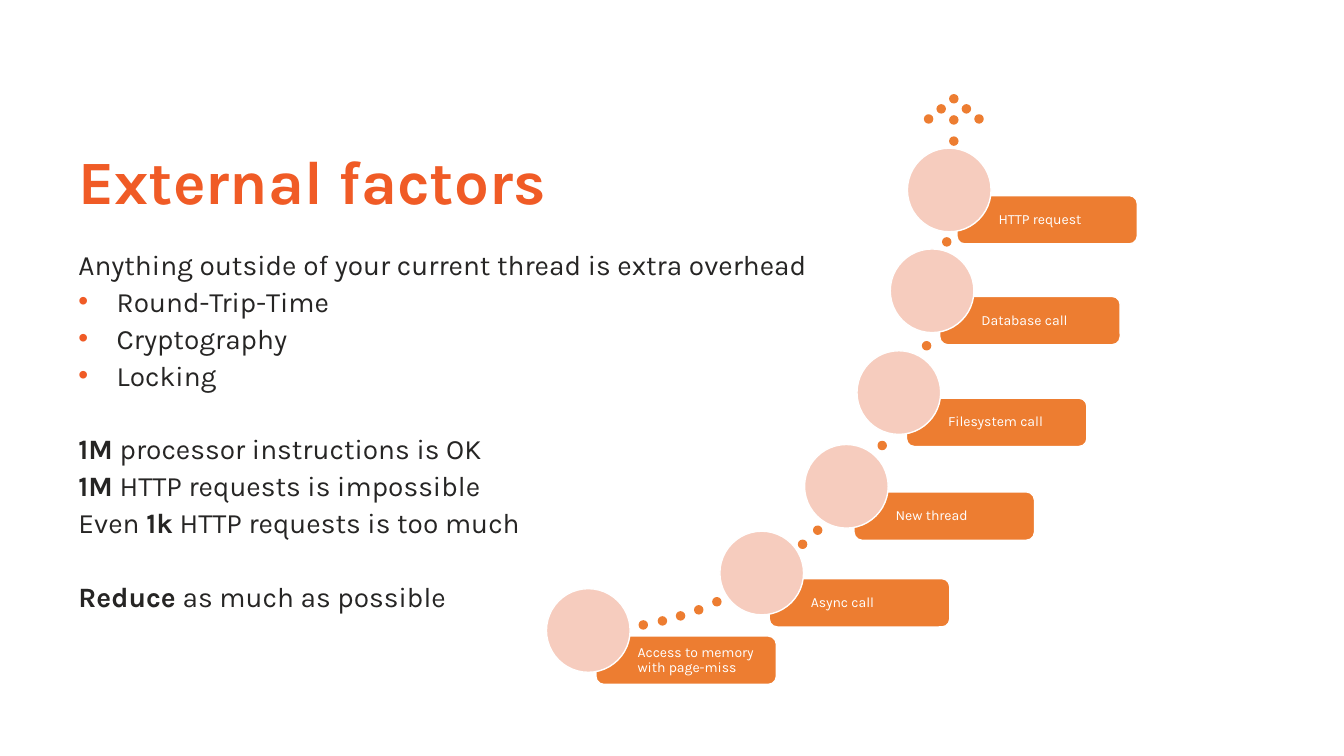
from lxml import etree
from pptx import Presentation
from pptx.dml.color import RGBColor
from pptx.enum.shapes import MSO_SHAPE
from pptx.enum.text import MSO_ANCHOR, MSO_AUTO_SIZE, PP_ALIGN
from pptx.oxml.ns import qn
from pptx.util import Inches, Pt

OVAL = MSO_SHAPE.OVAL
ROUND = MSO_SHAPE.ROUNDED_RECTANGLE
LEFT = PP_ALIGN.LEFT
MIDDLE = MSO_ANCHOR.MIDDLE
TOP = MSO_ANCHOR.TOP
FIXED = MSO_AUTO_SIZE.NONE

BODY = [
    ("Anything outside of your current thread is extra overhead", False, 0),
    ("Round-Trip-Time", True, 0),
    ("Cryptography", True, 0),
    ("Locking", True, 0),
    ("*1M* processor instructions is OK", False, 26.4),
    ("*1M* HTTP requests is impossible", False, 0),
    ("Even *1k* HTTP requests is too much", False, 0),
    ("*Reduce* as much as possible", False, 26.4),
]
STEPS = [
    ("Access to memory with page-miss", 5.42, 5.84),
    ("Async call", 7.14, 5.27),
    ("New thread", 7.98, 4.41),
    ("Filesystem call", 8.5, 3.48),
    ("Database call", 8.83, 2.47),
    ("HTTP request", 9, 1.47),
]
TRAIL = [
    (7.07, 5.93), (6.89, 6.01), (6.71, 6.07), (6.53, 6.12), (6.34, 6.16),
    (8.07, 5.22), (7.92, 5.36), (8.71, 4.38), (9.15, 3.39), (9.35, 2.36),
    (9.42, 1.15), (9.42, 1.36),
]
TIP = [(9.42 + 0.125 * n, 0.94 + 0.1 * abs(n)) for n in range(-2, 3)]


def rgb(code):
    return RGBColor.from_string(code)


class Deck:
    face = "Karla"
    accent = "F05B26"
    ink = "262524"
    orange = "ED7D31"
    pale = "F6CCBE"
    white = "FFFFFF"

    def __init__(self):
        self.prs = Presentation()
        self.prs.slide_width = Inches(13.33)
        self.prs.slide_height = Inches(7.5)
        self.slide = self.prs.slides.add_slide(self.prs.slide_layouts[5])

    def style(self, font, size, color, bold=False):
        font.name = self.face
        font.size = Pt(size)
        font.bold = bold
        font.color.rgb = rgb(color)

    def frame(self, frame, anchor):
        frame.word_wrap = True
        frame.auto_size = FIXED
        frame.vertical_anchor = anchor

    def title(self, text, x, y, w, h):
        title = self.slide.shapes.title
        title.left, title.top, title.width, title.height = map(Inches, (x, y, w, h))
        frame = title.text_frame
        frame.text = text
        self.frame(frame, MIDDLE)
        para = frame.paragraphs[0]
        para.alignment = LEFT
        para.line_spacing = 0.9
        self.style(para.runs[0].font, 44, self.accent, True)

    def bullet(self, para):
        props = para._p.get_or_add_pPr()
        props.set("marL", str(Inches(0.38)))
        props.set("indent", str(-Inches(0.38)))
        color = etree.SubElement(props, qn("a:buClr"))
        etree.SubElement(color, qn("a:srgbClr"), val=self.accent)
        etree.SubElement(props, qn("a:buFont"), typeface="Arial")
        etree.SubElement(props, qn("a:buChar"), char="•")

    def body(self, lines, x, y, w, h):
        box = self.slide.shapes.add_textbox(*map(Inches, (x, y, w, h)))
        frame = box.text_frame
        self.frame(frame, TOP)
        for row, (text, listed, gap) in enumerate(lines):
            para = frame.add_paragraph() if row else frame.paragraphs[0]
            if listed:
                self.bullet(para)
            para.line_spacing = 1.1
            para.space_before = Pt(gap)
            for part, words in enumerate(text.split("*")):
                if words:
                    run = para.add_run()
                    run.text = words
                    self.style(run.font, 20, self.ink, part % 2 == 1)

    def shape(self, kind, x, y, w, h, fill, line):
        shape = self.slide.shapes.add_shape(kind, *map(Inches, (x, y, w, h)))
        shape.shadow.inherit = False
        shape.fill.solid()
        shape.fill.fore_color.rgb = rgb(fill)
        shape.line.color.rgb = rgb(line)
        shape.line.width = Pt(1)
        return shape

    def dot(self, x, y):
        self.shape(OVAL, x, y, 0.08, 0.08, self.orange, self.orange)

    def step(self, text, x, y):
        card = self.shape(ROUND, x + 0.49, y + 0.47, 1.79, 0.48, self.orange, self.white)
        frame = card.text_frame
        frame.text = text
        self.frame(frame, MIDDLE)
        frame.margin_left = Inches(0.39)
        frame.margin_right = frame.margin_top = frame.margin_bottom = Inches(0.04)
        para = frame.paragraphs[0]
        para.alignment = LEFT
        para.line_spacing = 0.9
        self.style(para.runs[0].font, 10, self.white)
        self.shape(OVAL, x, y, 0.83, 0.83, self.pale, self.white)


def main():
    deck = Deck()
    deck.title("External factors", 0.68, 1.48, 11.97, 0.7)
    deck.body(BODY, 0.68, 2.37, 11.97, 4.62)
    for spot in TRAIL + TIP:
        deck.dot(*spot)
    for step in STEPS:
        deck.step(*step)
    deck.prs.save("out.pptx")


if __name__ == "__main__":
    main()
